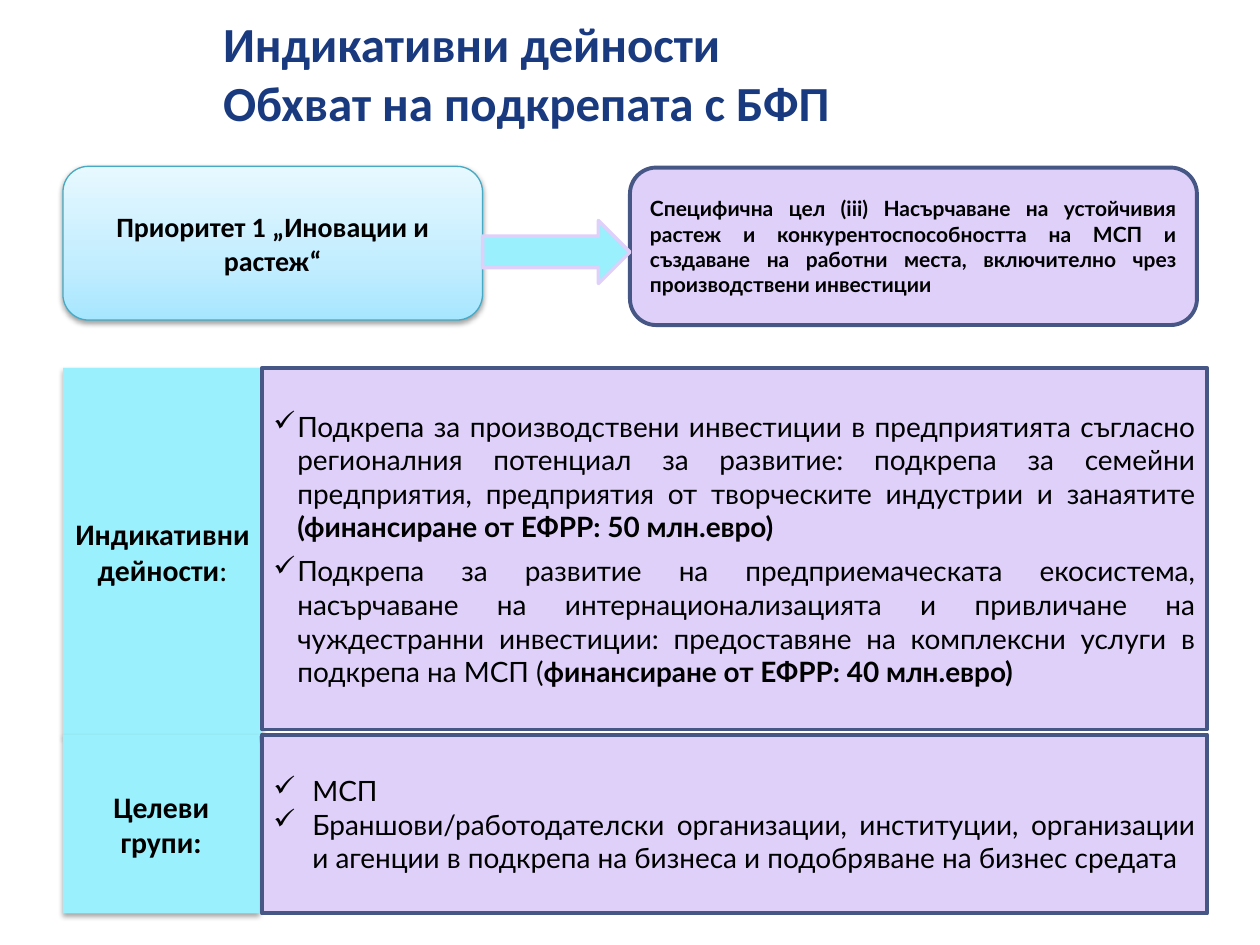
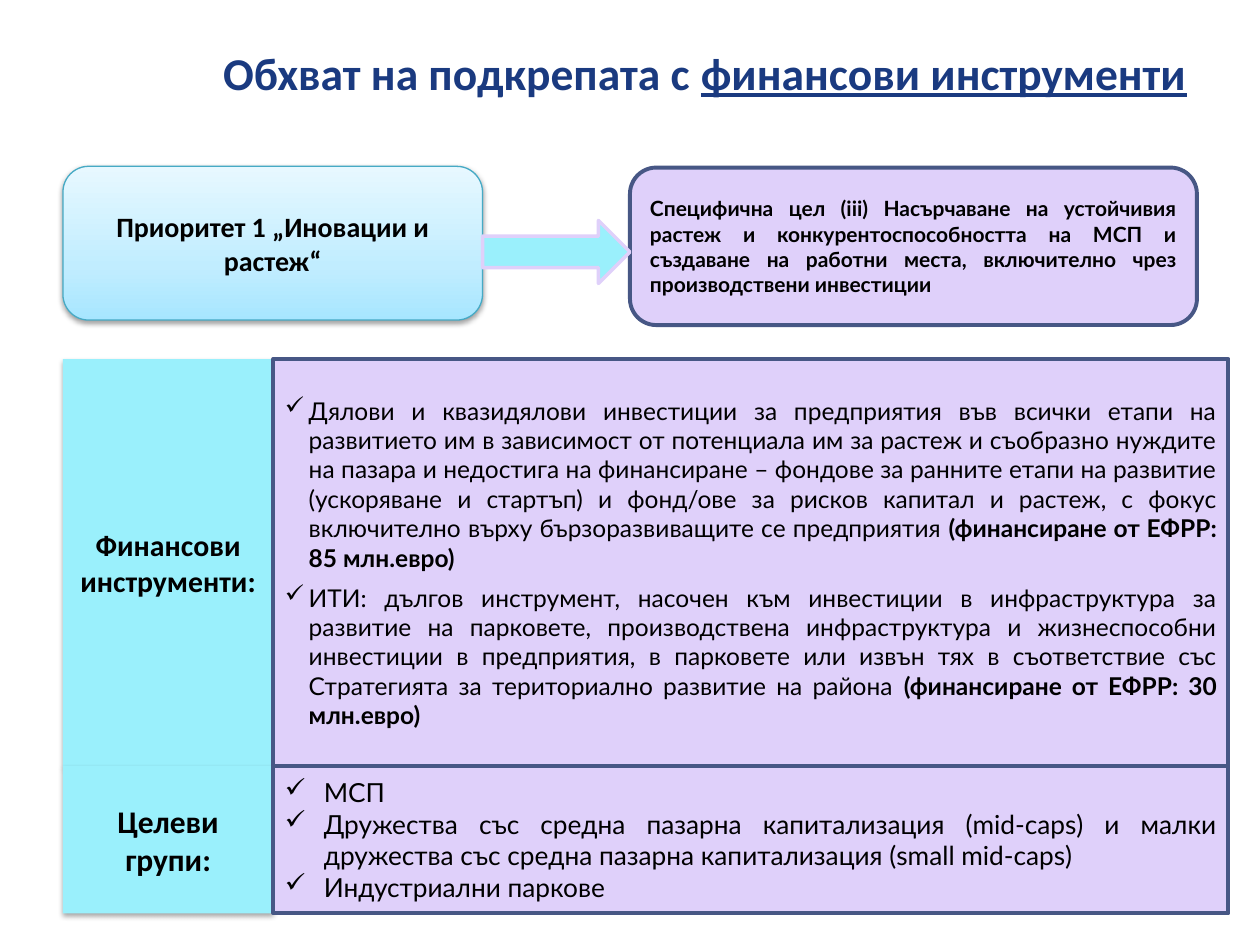
from lxml.etree import SubElement
from pptx import Presentation
from pptx.dml.color import RGBColor
from pptx.enum.shapes import MSO_SHAPE
from pptx.enum.text import MSO_ANCHOR, MSO_AUTO_SIZE, PP_ALIGN
from pptx.oxml import parse_xml
from pptx.oxml.ns import nsdecls, qn
from pptx.util import Inches, Pt

# Shared style
NAVY = RGBColor(0x1A, 0x3A, 0x80)
BLACK = RGBColor(0x00, 0x00, 0x00)
CYAN = RGBColor(0x9A, 0xF0, 0xFC)
LILAC = RGBColor(0xDF, 0xD0, 0xFA)
INDIGO = RGBColor(0x47, 0x57, 0x85)
TEAL = RGBColor(0x46, 0xAA, 0xC5)
PRIORITY_STOPS = [(0, "A7E6FF"), (35, "C1EDFF"), (100, "E7F8FF")]
HEAD_FONT, BODY_FONT = "Calibri", "Lato"
LEFT, BOTTOM = 0.5, 7.25

# Shared wording
PRIORITY = "Приоритет 1 „Иновации и растеж“"
OBJECTIVE = (
    "Специфична цел (iii) Насърчаване на устойчивия растеж и "
    "конкурентоспособността на МСП и създаване на работни места, "
    "включително чрез производствени инвестиции"
)
TARGET_GROUPS = "Целеви групи:"

# A paragraph is a list of (text, marks); marks: b = bold, u = underlined
SLIDES = [
    dict(
        title=[("Индикативни дейности\nОбхват на подкрепата с БФП", "b")],
        title_size=28,
        top=2.92, split=5.83, body_left=2.08, body_width=7.5,
        label_widths=(1.58, 1.56), label_sizes=(17, 17),
        label_height=2.92, body_height=2.87, body_sizes=(16, 16),
        label=[("Индикативни дейности", "b"), (":", "")],
        activities=[
            [("Подкрепа за производствени инвестиции в предприятията съгласно "
              "регионалния потенциал за развитие: подкрепа за семейни предприятия, "
              "предприятия от творческите индустрии и занаятите ", ""),
             ("(финансиране от ЕФРР: 50 млн.евро)", "b")],
            [("Подкрепа за развитие на предприемаческата екосистема, насърчаване на "
              "интернационализацията и привличане на чуждестранни инвестиции: "
              "предоставяне на комплексни услуги в подкрепа на МСП (", ""),
             ("финансиране от ЕФРР: 40 млн.евро)", "b")],
        ],
        activities_after=(6, 6),
        groups=[
            "МСП",
            "Браншови/работодателски организации, институции, организации и "
            "агенции в подкрепа на бизнеса и подобряване на бизнес средата",
        ],
    ),
    dict(
        title=[("Обхват на подкрепата с ", "b"), ("финансови инструменти", "bu")],
        title_size=26,
        top=2.85, split=6.08, body_left=2.17, body_width=7.58,
        label_widths=(1.67, 1.67), label_sizes=(17, 18),
        label_height=3.23, body_height=3.23, body_sizes=(14, 15),
        label=[("Финансови инструменти:", "b")],
        activities=[
            [("Дялови и квазидялови инвестиции за предприятия във всички етапи на "
              "развитието им в зависимост от потенциала им за растеж и съобразно "
              "нуждите на пазара и недостига на финансиране – фондове за ранните "
              "етапи на развитие (ускоряване и стартъп) и фонд/ове за рисков капитал "
              "и растеж, с фокус включително върху бързоразвиващите се предприятия ", ""),
             ("(финансиране от ЕФРР: 85 млн.евро)", "b")],
            [("ИТИ: дългов инструмент, насочен към инвестиции в инфраструктура за "
              "развитие на парковете, производствена инфраструктура и жизнеспособни "
              "инвестиции в предприятия, в парковете или извън тях в съответствие със "
              "Стратегията за териториално развитие на района ", ""),
             ("(финансиране от ЕФРР: 30 млн.евро)", "b")],
        ],
        activities_after=(6, 0),
        groups=[
            "МСП",
            "Дружества със средна пазарна капитализация (mid-caps) и малки "
            "дружества със средна пазарна капитализация (small mid-caps)",
            "Индустриални паркове",
        ],
    ),
]


def write(shape, paragraphs, size, font, color=BLACK, align=PP_ALIGN.CENTER,
          check_indent=None, after=None, side_margin=0.1):
    frame = shape.text_frame
    frame.word_wrap = True
    frame.auto_size = MSO_AUTO_SIZE.NONE
    frame.vertical_anchor = MSO_ANCHOR.MIDDLE
    frame.margin_left = frame.margin_right = Inches(side_margin)
    for i, runs in enumerate(paragraphs):
        paragraph = frame.add_paragraph() if i else frame.paragraphs[0]
        paragraph.alignment = align
        if after:
            paragraph.space_after = Pt(after[i])
        if check_indent:
            props = paragraph._p.get_or_add_pPr()
            props.set("marL", str(Inches(check_indent)))
            props.set("indent", str(-Inches(check_indent)))
            SubElement(props, qn("a:buChar")).set("char", "✓")
        for text, marks in runs:
            for line_number, line in enumerate(text.split("\n")):
                if line_number:
                    paragraph.add_line_break()
                run = paragraph.add_run()
                run.text = line
                run.font.size, run.font.name = Pt(size), font
                run.font.bold, run.font.underline = "b" in marks, "u" in marks
                run.font.color.rgb = color


def add_box(slide, kind, bounds, fill=None, line=None, line_width=2.25, shadow=None):
    box = slide.shapes.add_shape(kind, *map(Inches, bounds))
    box.shadow.inherit = False
    if fill:
        box.fill.solid()
        box.fill.fore_color.rgb = fill
    if line:
        box.line.color.rgb = line
        box.line.width = Pt(line_width)
    else:
        box.line.fill.background()
    if shadow:
        opacity, blur, distance = shadow
        effects = box._element.spPr.find(qn("a:effectLst"))
        effects.append(parse_xml(
            f'<a:outerShdw {nsdecls("a")} blurRad="{Pt(blur)}" dist="{Pt(distance)}" '
            f'dir="5400000" rotWithShape="0"><a:srgbClr val="000000">'
            f'<a:alpha val="{opacity * 1000}"/></a:srgbClr></a:outerShdw>'))
    return box


deck = Presentation()
deck.slide_width, deck.slide_height = Inches(10), Inches(7.5)

for content in SLIDES:
    slide = deck.slides.add_slide(deck.slide_layouts[5])

    # Title
    title = slide.shapes.title
    title.left, title.top = Inches(1.67), Inches(0)
    title.width, title.height = Inches(8.22), Inches(1.15)
    write(title, [content["title"]], content["title_size"], HEAD_FONT,
          color=NAVY, align=PP_ALIGN.LEFT)

    # Priority leading to the specific objective
    priority = add_box(slide, MSO_SHAPE.ROUNDED_RECTANGLE, (LEFT, 1.32, 3.33, 1.22),
                       line=TEAL, line_width=0.75, shadow=(38, 3.1, 1.6))
    stops = "".join(f'<a:gs pos="{position * 1000}"><a:srgbClr val="{color}"/></a:gs>'
                    for position, color in PRIORITY_STOPS)
    priority._element.spPr.find(qn("a:prstGeom")).addnext(parse_xml(
        f'<a:gradFill {nsdecls("a")} rotWithShape="1"><a:gsLst>{stops}</a:gsLst>'
        '<a:lin ang="16200000" scaled="0"/></a:gradFill>'))
    write(priority, [[(PRIORITY, "b")]], 16, HEAD_FONT)

    objective = add_box(slide, MSO_SHAPE.ROUNDED_RECTANGLE, (5, 1.33, 4.5, 1.25),
                        fill=LILAC, line=INDIGO)
    write(objective, [[(OBJECTIVE, "b")]], 12, BODY_FONT, align=PP_ALIGN.JUSTIFY)
    add_box(slide, MSO_SHAPE.RIGHT_ARROW, (3.83, 1.75, 1.17, 0.5),
            fill=CYAN, line=LILAC, line_width=2)

    # Labelled rows: activities, then target groups
    groups_height = BOTTOM - content["split"]
    rows = [
        (content["top"], content["label_height"], content["body_height"],
         content["label"], content["activities"], 0.19, content["activities_after"]),
        (content["split"], groups_height, groups_height,
         [(TARGET_GROUPS, "b")], [[(group, "")] for group in content["groups"]], 0.31, None),
    ]
    for i, (top, label_height, body_height, label_runs, items, indent, after) in enumerate(rows):
        label = add_box(slide, MSO_SHAPE.RECTANGLE,
                        (LEFT, top, content["label_widths"][i], label_height),
                        fill=CYAN, shadow=(35, 3.1, 1.8))
        write(label, [label_runs], content["label_sizes"][i], HEAD_FONT, side_margin=0.07)
        body = add_box(slide, MSO_SHAPE.RECTANGLE,
                       (content["body_left"], top, content["body_width"], body_height),
                       fill=LILAC, line=INDIGO)
        write(body, items, content["body_sizes"][i], BODY_FONT, align=PP_ALIGN.JUSTIFY,
              check_indent=indent, after=after, side_margin=0.09)

deck.save("out.pptx")
